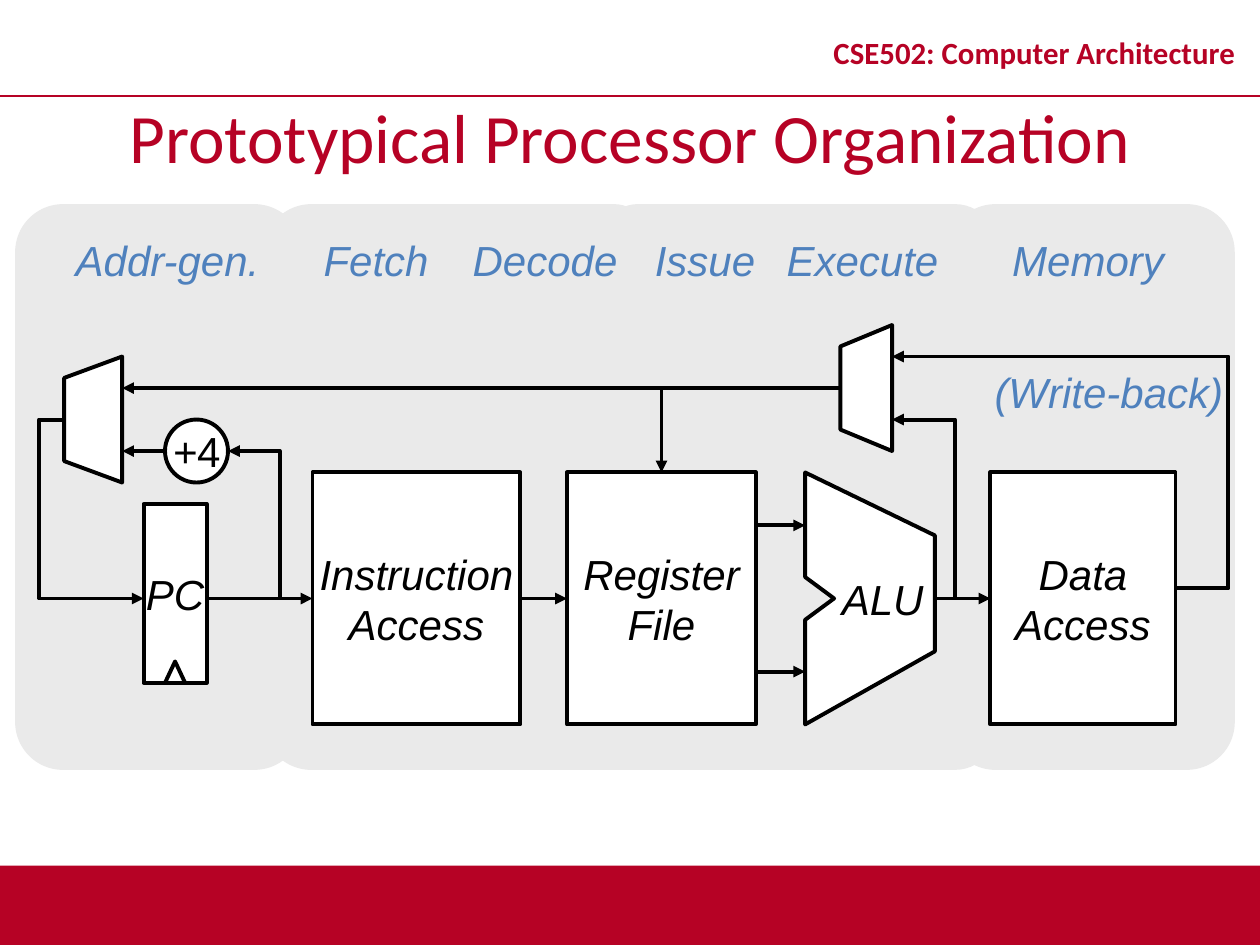
from dataclasses import dataclass

from pptx import Presentation
from pptx.dml.color import RGBColor
from pptx.enum import shapes, text
from pptx.oxml.ns import qn
from pptx.util import Inches, Pt
from lxml import etree


@dataclass(frozen=True)
class Theme:
    red: RGBColor = RGBColor(0xB6, 0x02, 0x25)
    blue: RGBColor = RGBColor(0x4F, 0x81, 0xBD)
    gray: RGBColor = RGBColor(0xEA, 0xEA, 0xEA)
    black: RGBColor = RGBColor(0, 0, 0)
    white: RGBColor = RGBColor(255, 255, 255)
    head: str = "Calibri"
    body: str = "Arial"
    title: float = 39.6
    course: float = 17.6
    label: float = 24
    wire: float = 2.25
    rule: float = 1


T = Theme()
KIND = shapes.MSO_SHAPE
MID = text.MSO_ANCHOR.MIDDLE
TOP, LEFT, BOTTOM, RIGHT = range(4)


def style(para, size, color, face=T.body, bold=False, slant=False):
    para.alignment = text.PP_ALIGN.CENTER
    font = para.font
    font.name, font.size, font.color.rgb = face, Pt(size), color
    font.bold, font.italic = bold, slant


def paint(shape, fill=None, line=None):
    """Give a shape its flat fill and outline."""
    shape.shadow.inherit = False
    if fill is None:
        shape.fill.background()
    else:
        shape.fill.solid()
        shape.fill.fore_color.rgb = fill
    if line is None:
        shape.line.fill.background()
    else:
        shape.line.color.rgb = line
        shape.line.width = Pt(T.wire)


def tip(shape):
    """Put an arrowhead on the far end of a line."""
    line = shape.element.spPr.find(qn("a:ln"))
    etree.SubElement(line, qn("a:tailEnd"), type="triangle")


def block(slide, kind, area, fill, line=None):
    shape = slide.shapes.add_shape(kind, *map(Inches, area))
    paint(shape, fill, line)
    return shape


def part(slide, words, area, kind=KIND.RECTANGLE):
    """A white, outlined processor part with centred words."""
    shape = block(slide, kind, area, T.white, T.black)
    frame = shape.text_frame
    frame.word_wrap = False
    frame.vertical_anchor = MID
    for i, word in enumerate(words):
        para = frame.paragraphs[0] if i == 0 else frame.add_paragraph()
        para.text = word
        style(para, T.label, T.black, slant=True)
    return shape


def banner(slide, words, area, size, **look):
    box = slide.shapes.add_textbox(*map(Inches, area))
    frame = box.text_frame
    frame.word_wrap = True
    frame.vertical_anchor = MID
    para = frame.paragraphs[0]
    para.text = words
    style(para, size, T.red, T.head, **look)
    return para


def label(slide, words, left, top, width, color=T.blue):
    """A one-line label; without side margins its word always fits."""
    box = slide.shapes.add_textbox(*map(Inches, (left, top, width, 0.5)))
    frame = box.text_frame
    frame.word_wrap = False
    frame.margin_left = frame.margin_right = 0
    frame.paragraphs[0].text = words
    style(frame.paragraphs[0], T.label, color, slant=True)


def link(slide, start, end, color=T.black, width=T.wire):
    line = slide.shapes.add_connector(
        shapes.MSO_CONNECTOR.STRAIGHT, *map(Inches, (*start, *end)))
    line.line.color.rgb = color
    line.line.width = Pt(width)
    etree.SubElement(line.element.spPr, qn("a:effectLst"))
    return line


def arrow(slide, start, end):
    line = link(slide, start, end)
    tip(line)
    return line


def trace(slide, points, fill=None, close=False):
    spots = [(Inches(x), Inches(y)) for x, y in points]
    path = slide.shapes.build_freeform(*spots[0])
    path.add_line_segments(spots[1:], close=close)
    shape = path.convert_to_shape()
    paint(shape, fill, T.black)
    return shape


def mux(slide, left, right, top):
    """A one-inch-tall selector, narrow on its left side."""
    trace(slide, [(right, top), (left, top + 0.17), (left, top + 0.83),
                  (right, top + 1)], T.white, True)


def main():
    deck = Presentation()
    deck.slide_width, deck.slide_height = Inches(10), Inches(7.5)
    slide = deck.slides.add_slide(deck.slide_layouts[6])

    # Frame of the page
    block(slide, KIND.RECTANGLE, (0, 6.87, 10, 0.63), T.red)
    link(slide, (0, 0.76), (10, 0.76), T.red, T.rule)
    course = banner(slide, "CSE502: Computer Architecture",
                    (6.42, 0.13, 3.58, 0.63), T.course, bold=True)
    course.line_spacing = 0.8
    banner(slide, "Prototypical Processor Organization",
           (0, 0.76, 10, 0.63), T.title)

    # Gray stage panels
    panels = [(0.12, 2.41, 9.68, 1.1), (4.37, 2.73, 1.81, 3.38)]
    panels += [(x, 1.62, w, 4.49) for x, w in (
        (2.09, 2.28), (4.76, 1.82), (3.5, 1.65),
        (5.94, 1.97), (0.12, 2.28), (7.52, 2.28))]
    for area in panels:
        block(slide, KIND.ROUNDED_RECTANGLE, area, T.gray)

    # Stage names
    for words, left, width in (
            ("Addr-gen.", 0.49, 1.68), ("Fetch", 2.47, 1.03),
            ("Decode", 3.65, 1.35), ("Issue", 5.09, 1.01),
            ("Execute", 5.94, 1.81), ("Memory", 7.93, 1.41)):
        label(slide, words, left, 1.81, width)
    label(slide, "(Write-back)", 7.79, 2.86, 2.02)

    # Processor parts
    fetch = part(slide, ["Instruction", "Access"], (2.48, 3.75, 1.65, 2))
    regs = part(slide, ["Register", "File"], (4.5, 3.75, 1.5, 2))
    data = part(slide, ["Data", "Access"], (7.86, 3.75, 1.47, 2))
    part(slide, ["PC"], (1.14, 4, 0.5, 1.42))
    trace(slide, [(1.31, 5.42), (1.39, 5.25), (1.47, 5.42)])
    adder = part(slide, ["+"], (1.31, 3.33, 0.5, 0.5), KIND.OVAL)
    step = adder.text_frame.paragraphs[0].add_run()
    step.text = "4"
    step.font.italic = False
    mux(slide, 0.51, 0.97, 2.83)
    mux(slide, 6.67, 7.08, 2.58)
    trace(slide, [(6.39, 3.75), (7.42, 4.25), (7.42, 5.17), (6.39, 5.75),
                  (6.39, 4.92), (6.62, 4.75), (6.39, 4.58)], T.white, True)
    label(slide, "ALU", 6.58, 4.5, 0.85, T.black)

    # Straight arrows
    arrow(slide, (1.64, 4.75), (2.48, 4.75)).end_connect(fetch, LEFT)
    feed = arrow(slide, (4.13, 4.75), (4.5, 4.75))
    feed.begin_connect(fetch, RIGHT)
    feed.end_connect(regs, LEFT)
    arrow(slide, (7.42, 4.75), (7.86, 4.75)).end_connect(data, LEFT)
    for y in (4.17, 5.33):
        arrow(slide, (6, y), (6.39, y))
    arrow(slide, (5.33, 3.08), (0.97, 3.08))
    arrow(slide, (1.31, 3.58), (0.97, 3.58))

    # Bent arrows
    for points in (
            [(2.22, 4.75), (2.22, 3.58), (1.81, 3.58)],
            [(0.51, 3.33), (0.31, 3.33), (0.31, 4.75), (1.14, 4.75)],
            [(9.33, 4.67), (9.75, 4.67), (9.75, 2.83), (7.08, 2.83)],
            [(6.67, 3.08), (5.25, 3.08), (5.25, 3.75)],
            [(7.58, 4.75), (7.58, 3.33), (7.08, 3.33)]):
        tip(trace(slide, points))

    deck.save("out.pptx")


if __name__ == "__main__":
    main()
